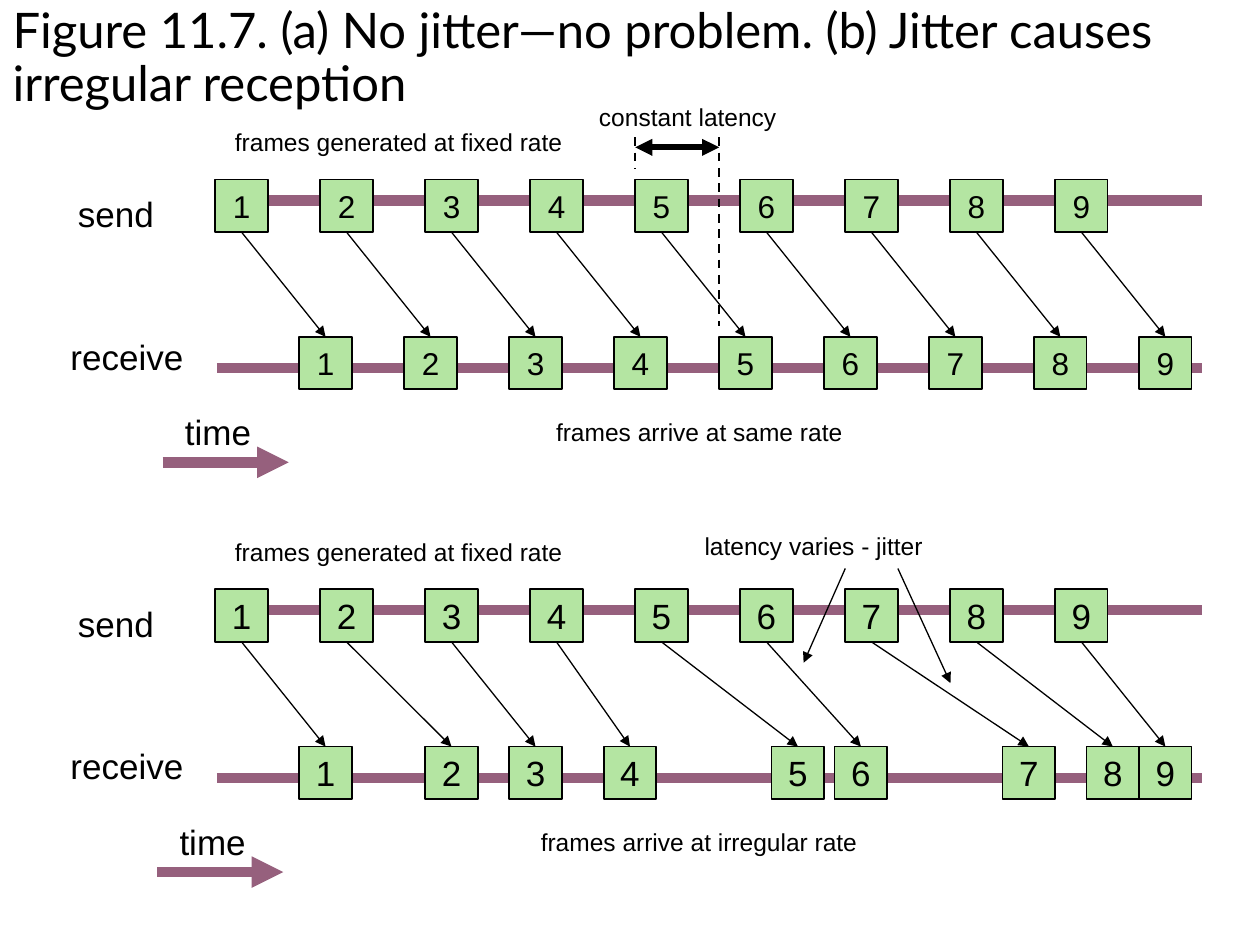
from lxml.etree import SubElement
from pptx import Presentation
from pptx.dml.color import RGBColor
from pptx.enum.dml import MSO_LINE
from pptx.enum.shapes import MSO_CONNECTOR, MSO_SHAPE
from pptx.enum.text import MSO_ANCHOR, MSO_AUTO_SIZE, PP_ALIGN
from pptx.oxml.ns import qn
from pptx.util import Cm, Pt

BLACK = RGBColor(0x00, 0x00, 0x00)
PLUM = RGBColor(0x96, 0x60, 0x7D)
GREEN = RGBColor(0xB4, 0xE5, 0xA2)

TITLE = "Figure 11.7. (a) No jitter—no problem. (b) Jitter causes irregular reception"
SIDE_LABELS = [("send", 1.32, 3.76, 2.06), ("receive", 1.17, 6.63, 2.82)]
TIME_LABEL = ("time", 3.48, 8.15, 1.85)
GENERATED_LABEL = ("frames generated at fixed rate", 4.47, 2.44, 7.14)
PANELS = [
    {
        "offset": 0,
        "time_shift": 0,
        "number_size": 18,
        "delays": [8] * 9,
        "notes": [
            ("constant latency", 11.81, 1.93, 4.11),
            ("frames arrive at same rate", 10.95, 8.28, 6.3),
        ],
        "latency_frame": 5,
        "pointers": [],
    },
    {
        "offset": 8.26,
        "time_shift": -0.11,
        "number_size": 20,
        "delays": [8, 10, 8, 7, 13, 9, 15, 13, 8],
        "notes": [
            ("latency varies - jitter", 13.94, 2.33, 4.93),
            ("frames arrive at irregular rate", 10.64, 8.28, 6.91),
        ],
        "latency_frame": None,
        "pointers": [(17.04, 3.2, 16.2, 5.1), (18.1, 3.2, 19.16, 5.51)],
    },
]

FRAME_SIZE = 1.06
FIRST_LEFT, LAST_LEFT = 4.34, 21.27
FRAME_GAP = (LAST_LEFT - FIRST_LEFT) / 8
DELAY_UNIT = FRAME_GAP / 10
SEND_TOP, RECEIVE_TOP = 3.62, 6.79
TRACK_LEFT, TRACK_RIGHT = 4.37, 24.23
SEND_TRACK, RECEIVE_TRACK = 4.04, 7.42
TIME_LEFT, TIME_LENGTH, TIME_TOP = 3.28, 2.54, 9.32


def add_text(paragraph, text, size, font_name="Arial"):
    run = paragraph.add_run()
    run.text = text
    run.font.name = font_name
    run.font.size = Pt(size)
    run.font.color.rgb = BLACK


def add_label(group, label, offset, size, alignment, shift=0):
    text, left, top, width = label
    height = 1.12 if size == 20 else 0.86
    box = group.shapes.add_textbox(Cm(left + shift), Cm(top + offset), Cm(width), Cm(height))
    box.text_frame.word_wrap = False
    box.text_frame.auto_size = MSO_AUTO_SIZE.SHAPE_TO_FIT_TEXT
    paragraph = box.text_frame.paragraphs[0]
    paragraph.alignment = alignment
    add_text(paragraph, text, size)


def add_line(group, start_x, start_y, end_x, end_y, width, color=BLACK, arrows=(), dashed=False):
    connector = group.shapes.add_connector(
        MSO_CONNECTOR.STRAIGHT, Cm(start_x), Cm(start_y), Cm(end_x), Cm(end_y)
    )
    connector.line.color.rgb = color
    connector.line.width = Pt(width)
    if dashed:
        connector.line.dash_style = MSO_LINE.DASH
    for arrow in arrows:
        SubElement(connector.line._get_or_add_ln(), qn(f"a:{arrow}"), type="triangle")
    SubElement(connector._element.spPr, qn("a:effectLst"))
    return connector


def add_frame(group, number, left, top, size):
    frame = group.shapes.add_shape(
        MSO_SHAPE.RECTANGLE, Cm(left), Cm(top), Cm(FRAME_SIZE), Cm(FRAME_SIZE)
    )
    frame.shadow.inherit = False
    frame.fill.solid()
    frame.fill.fore_color.rgb = GREEN
    frame.line.color.rgb = BLACK
    frame.line.width = Pt(1)
    frame.text_frame.word_wrap = False
    frame.text_frame.vertical_anchor = MSO_ANCHOR.MIDDLE
    paragraph = frame.text_frame.paragraphs[0]
    paragraph.alignment = PP_ALIGN.CENTER
    add_text(paragraph, str(number), size)
    return frame


def add_panel(slide, panel):
    group = slide.shapes.add_group_shape()
    offset, shift = panel["offset"], panel["time_shift"]
    for label in SIDE_LABELS:
        add_label(group, label, offset, 20, PP_ALIGN.LEFT)
    add_label(group, TIME_LABEL, offset, 20, PP_ALIGN.LEFT, shift)

    for track in (SEND_TRACK, RECEIVE_TRACK):
        add_line(group, TRACK_LEFT, track + offset, TRACK_RIGHT, track + offset, 6, PLUM)
    time_left, time_top = TIME_LEFT + shift, TIME_TOP + offset
    add_line(group, time_left, time_top, time_left + TIME_LENGTH, time_top, 6, PLUM, ["tailEnd"])

    send_lefts = [FIRST_LEFT + index * FRAME_GAP for index in range(9)]
    receive_lefts = [
        left + delay * DELAY_UNIT for left, delay in zip(send_lefts, panel["delays"])
    ]
    sent, received = [
        [
            add_frame(group, number, left, top + offset, panel["number_size"])
            for number, left in enumerate(lefts, 1)
        ]
        for lefts, top in ((send_lefts, SEND_TOP), (receive_lefts, RECEIVE_TOP))
    ]
    half = FRAME_SIZE / 2
    for index, (send_left, receive_left) in enumerate(zip(send_lefts, receive_lefts)):
        connector = add_line(
            group, send_left + half, SEND_TOP + FRAME_SIZE + offset,
            receive_left + half, RECEIVE_TOP + offset, 0.75, arrows=["tailEnd"],
        )
        connector.begin_connect(sent[index], 2)
        connector.end_connect(received[index], 0)

    for label in [GENERATED_LABEL, *panel["notes"]]:
        add_label(group, label, offset, 14, PP_ALIGN.CENTER)
    if panel["latency_frame"]:
        start = send_lefts[panel["latency_frame"] - 1]
        end = receive_lefts[panel["latency_frame"] - 1]
        for x, bottom in ((start, 3.4), (end, 6.58)):
            add_line(group, x, 2.77, x, bottom, 1.25, dashed=True)
        add_line(group, start, 2.97, end, 2.97, 3.25, arrows=["headEnd", "tailEnd"])
    for start_x, start_y, end_x, end_y in panel["pointers"]:
        add_line(group, start_x, start_y + offset, end_x, end_y + offset, 0.75, arrows=["tailEnd"])


def main():
    presentation = Presentation()
    presentation.slide_width, presentation.slide_height = Cm(25.4), Cm(19.05)
    slide = presentation.slides.add_slide(presentation.slide_layouts[5])

    title = slide.shapes.title
    title.left, title.top, title.width, title.height = Cm(0), Cm(0), Cm(25.4), Cm(2.79)
    title.text_frame.vertical_anchor = MSO_ANCHOR.TOP
    title.text_frame.auto_size = MSO_AUTO_SIZE.NONE
    paragraph = title.text_frame.paragraphs[0]
    paragraph.alignment = PP_ALIGN.LEFT
    paragraph.line_spacing = 0.9
    add_text(paragraph, TITLE, 28, "Lato")

    for panel in PANELS:
        add_panel(slide, panel)
    presentation.save("out.pptx")


if __name__ == "__main__":
    main()
